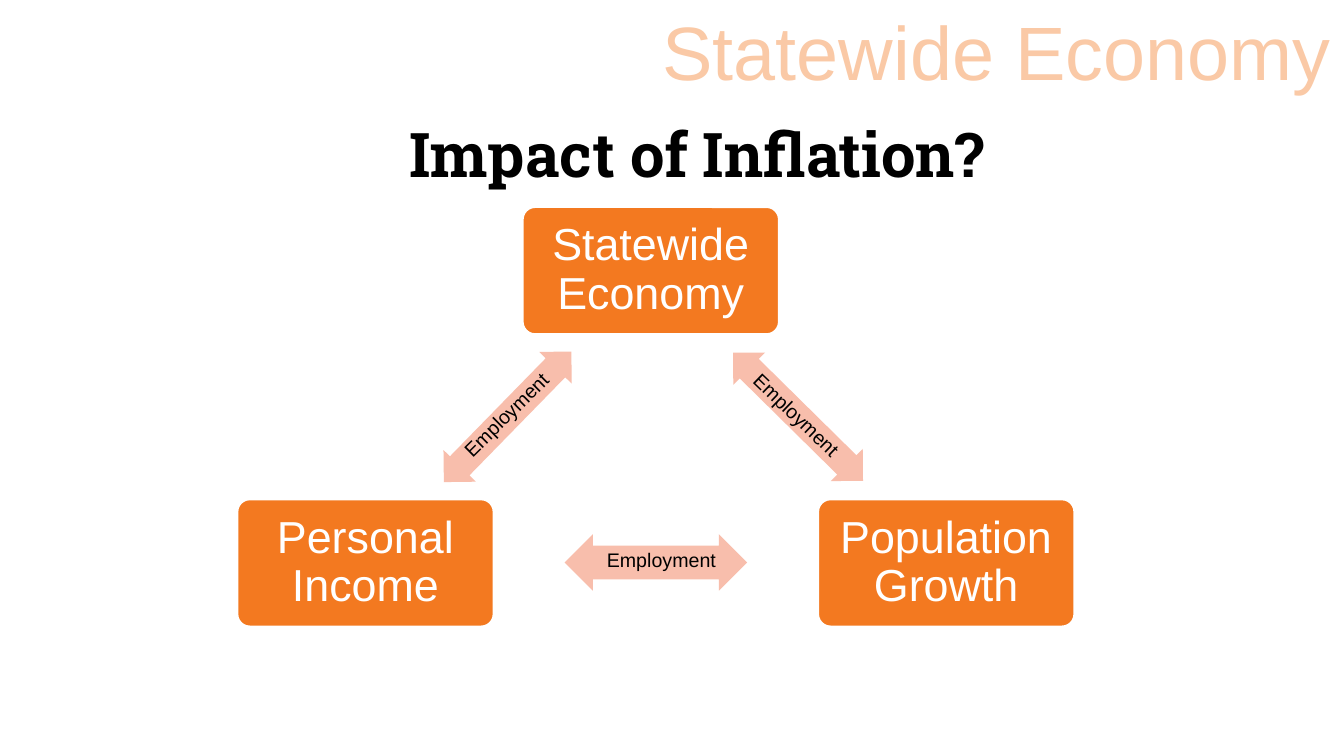
"""Build the slide on inflation and the statewide economy."""
from pptx import Presentation
from pptx import util as u
from pptx.dml.color import RGBColor
from pptx.enum import shapes, text

HUES = {"box": "F37920", "arrow": "F8BEAC", "head": "FAC9A6",
        "white": "FFFFFF", "black": "000000"}


def write(frame, words, size, hue, font="Arial", align=text.PP_ALIGN.CENTER):
    para = frame.paragraphs[0]
    para.alignment = align
    run = para.add_run()
    run.text = words
    run.font.size = u.Pt(size)
    run.font.name = font
    run.font.color.rgb = RGBColor.from_string(HUES[hue])
    return para


def draw(kind, place, hue):
    form = slide.shapes.add_shape(kind, *map(u.Inches, place))
    form.shadow.inherit = False
    form.fill.solid()
    form.fill.fore_color.rgb = RGBColor.from_string(HUES[hue])
    return form


deck = Presentation()
deck.slide_width = u.Inches(13.33)
deck.slide_height = u.Inches(7.5)
slide = deck.slides.add_slide(deck.slide_layouts[6])

title = slide.shapes.add_textbox(*map(u.Inches, (1.06, 1.18, 11.71, 0.9)))
title.text_frame.word_wrap = True
para = write(title.text_frame, "Impact of Inflation?", 44, "black", "Roboto Slab")
para.line_spacing = 0.9
para.runs[0].font.bold = True

head = slide.shapes.add_textbox(*map(u.Inches, (6.44, 0, 6.89, 1.01)))
head.text_frame.word_wrap = False
write(head.text_frame, "Statewide Economy", 54, "head")

for words, left, top in [("Statewide Economy", 5.18, 2.05),
                         ("Population Growth", 8.11, 4.95),
                         ("Personal Income", 2.35, 4.95)]:
    box = draw(shapes.MSO_SHAPE.ROUNDED_RECTANGLE, (left, top, 2.55, 1.27), "box")
    box.adjustments[0] = 0.1
    box.line.color.rgb = RGBColor.from_string(HUES["white"])
    box.line.width = u.Pt(2)
    frame = box.text_frame
    frame.word_wrap = True
    frame.vertical_anchor = text.MSO_ANCHOR.MIDDLE
    frame.margin_left = frame.margin_right = u.Inches(0.13)
    frame.margin_top = frame.margin_bottom = u.Inches(0.13)
    write(frame, words, 32, "white").line_spacing = 0.9

for left, top, high, turn in [(7.01, 3.91, 0.45, 44.6),
                              (5.6, 5.3, 0.56, 180),
                              (4.13, 3.91, 0.45, 314.3)]:
    arrow = draw(shapes.MSO_SHAPE.LEFT_RIGHT_ARROW, (left, top, 1.81, high), "arrow")
    arrow.adjustments[0] = 0.6
    arrow.adjustments[1] = 0.5
    arrow.line.fill.background()
    arrow.rotation = turn

for left, top, turn in [(4.35, 3.87, 315.3), (7.23, 4.02, 43.8), (5.92, 5.39, 0)]:
    label = slide.shapes.add_textbox(*map(u.Inches, (left, top, 1.49, 0.34)))
    label.rotation = turn
    label.text_frame.word_wrap = True
    write(label.text_frame, "Employment", 14, "black", align=text.PP_ALIGN.LEFT)

deck.save("out.pptx")
